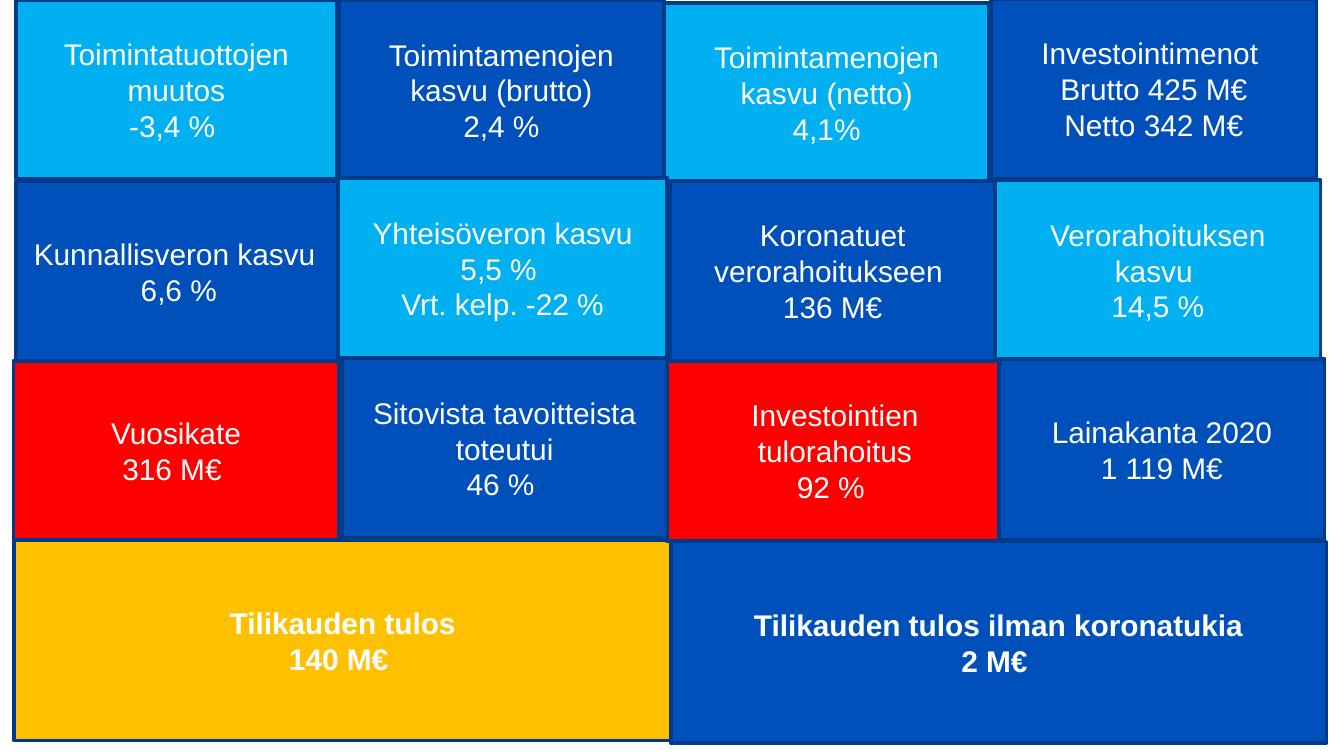
from dataclasses import dataclass

from pptx import Presentation, util as u
from pptx.dml.color import RGBColor
from pptx.enum import shapes, text

PX = u.Inches(1) // 200
COLORS = {
    "sky": "00B0F0",
    "blue": "0050BB",
    "red": "FF0000",
    "amber": "FFC000",
    "border": "003B8A",
    "white": "FFFFFF",
}


@dataclass(frozen=True)
class Tile:
    x: int
    y: int
    w: int
    h: int
    fill: str
    label: str
    bold: bool = False


TILES = [
    Tile(24, 0, 477, 267, "sky", "Toimintatuottojen muutos\n-3,4 % "),
    Tile(504, 0, 484, 268, "blue", "Toimintamenojen kasvu (brutto)\n2,4 %"),
    Tile(988, 4, 484, 268, "sky", "Toimintamenojen kasvu (netto)\n4,1%"),
    Tile(24, 270, 484, 268, "blue", "Kunnallisveron kasvu \n6,6 %"),
    Tile(1481, 268, 484, 268, "sky", "Verorahoituksen kasvu \n14,5 %"),
    Tile(503, 265, 490, 268, "sky", "Yhteisöveron kasvu 5,5 % \nVrt. kelp. -22 %"),
    Tile(1475, -2, 484, 268, "blue", "Investointimenot \nBrutto 425 M€\nNetto 342 M€"),
    Tile(20, 537, 484, 268, "red", "Vuosikate\n316 M€ "),
    Tile(21, 804, 978, 298, "amber", "Tilikauden tulos\n140 M€ ", True),
    Tile(992, 535, 501, 270, "red", "Investointien tulorahoitus\n92 % "),
    Tile(998, 806, 976, 300, "blue", "Tilikauden tulos ilman koronatukia\n2 M€ ", True),
    Tile(1487, 534, 484, 270, "blue", "Lainakanta 2020\n1 119 M€"),
    Tile(997, 269, 484, 268, "blue", "Koronatuet verorahoitukseen \n136 M€"),
    Tile(509, 533, 484, 268, "blue", "Sitovista tavoitteista toteutui\n46 % "),
]


def px(n: int) -> u.Emu:
    return u.Emu(n * PX)


def color(name: str) -> RGBColor:
    return RGBColor.from_string(COLORS[name])


def draw_tile(s, tile: Tile) -> None:
    sp = s.shapes.add_shape(
        shapes.MSO_SHAPE.RECTANGLE, px(tile.x), px(tile.y), px(tile.w), px(tile.h)
    )
    sp.shadow.inherit = False
    sp.fill.solid()
    sp.fill.fore_color.rgb = color(tile.fill)
    sp.line.color.rgb = color("border")
    sp.line.width = u.Pt(2)
    tf = sp.text_frame
    tf.word_wrap = True
    tf.vertical_anchor = text.MSO_ANCHOR.MIDDLE
    tf.text = tile.label
    for p in tf.paragraphs:
        p.alignment = text.PP_ALIGN.CENTER
        p.font.name = "Arial"
        p.font.size = u.Pt(16)
        p.font.bold = tile.bold
        p.font.color.rgb = color("white")


def main() -> None:
    prs = Presentation()
    prs.slide_width, prs.slide_height = px(2000), px(1125)
    s = prs.slides.add_slide(prs.slide_layouts[6])
    for tile in TILES:
        draw_tile(s, tile)
    prs.save("out.pptx")


if __name__ == "__main__":
    main()
